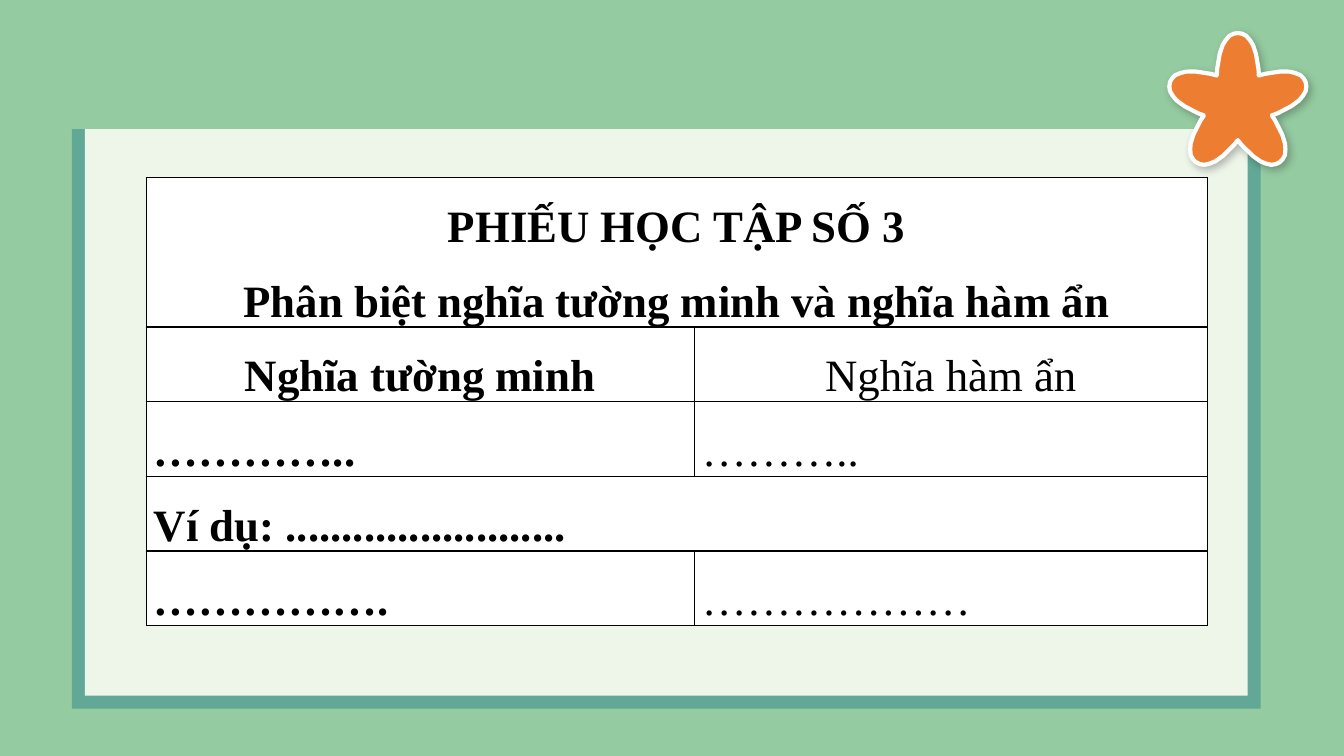
from dataclasses import dataclass
from math import cos, radians, sin

from lxml import etree
from pptx import Presentation
from pptx.dml.color import RGBColor
from pptx.enum.shapes import MSO_SHAPE
from pptx.enum.text import PP_ALIGN
from pptx.oxml.ns import qn
from pptx.util import Pt

RECTANGLE = MSO_SHAPE.RECTANGLE
CENTER = PP_ALIGN.CENTER
JUSTIFY = PP_ALIGN.JUSTIFY


@dataclass(frozen=True)
class Theme:
    backdrop: str = "95CBA1"
    frame: str = "62A896"
    paper: str = "EEF5E9"
    cell: str = "FFFFFF"
    ink: str = "000000"
    star: str = "ED7D31"
    star_edge: str = "FFFFFF"
    font: str = "Times New Roman"
    text_size: int = 32


THEME = Theme()
SLIDE_WIDTH, SLIDE_HEIGHT = 960, 540
BLANK_LAYOUT = 6

WORKSHEET_ROWS = [
    (105, CENTER, [["PHIẾU HỌC TẬP SỐ 3", "Phân biệt nghĩa tường minh và nghĩa hàm ẩn"]]),
    (53, CENTER, [["Nghĩa tường minh"], ["Nghĩa hàm ẩn"]]),
    (53, JUSTIFY, [["………….."], ["……….."]]),
    (53, JUSTIFY, [["Ví dụ: ........................."]]),
    (53, JUSTIFY, [["……………."], ["………………"]]),
]

HALF_PETAL = [
    (15, 20.6), (14.8, 25), (14, 30), (13, 36), (12, 39),
    (10.8, 42.5), (8.6, 46), (6, 49), (3, 50.5), (0, 51),
]


def color(code):
    return RGBColor.from_string(code)


def add_panel(slide, left, top, width, height, fill):
    panel = slide.shapes.add_shape(RECTANGLE, Pt(left), Pt(top), Pt(width), Pt(height))
    panel.shadow.inherit = False
    panel.fill.solid()
    panel.fill.fore_color.rgb = color(fill)
    panel.line.fill.background()


def add_board(slide, left, top, width, height):
    rim = 9.2
    add_panel(slide, left, top, width, height, THEME.frame)
    add_panel(slide, left + rim, top, width - 2 * rim, height - rim, THEME.paper)


def style_cell(cell):
    properties = cell._tc.get_or_add_tcPr()
    for side in ("a:lnL", "a:lnR", "a:lnT", "a:lnB"):
        border = etree.SubElement(properties, qn(side), w=str(Pt(1)))
        border_fill = etree.SubElement(border, qn("a:solidFill"))
        etree.SubElement(border_fill, qn("a:srgbClr"), val=THEME.ink)
    cell.fill.solid()
    cell.fill.fore_color.rgb = color(THEME.cell)
    cell.margin_left = cell.margin_right = Pt(5.4)
    cell.margin_top = cell.margin_bottom = 0


def write_cell(cell, lines, alignment, bold):
    frame = cell.text_frame
    for index, line in enumerate(lines):
        paragraph = frame.add_paragraph() if index else frame.paragraphs[0]
        paragraph.alignment = alignment
        paragraph.line_spacing = 1.5
        run = paragraph.add_run()
        run.text = line
        run.font.name = THEME.font
        run.font.size = Pt(THEME.text_size)
        run.font.bold = bold
        run.font.color.rgb = color(THEME.ink)


def add_worksheet(slide, left, top, width, height):
    worksheet = slide.shapes.add_table(
        len(WORKSHEET_ROWS), 2, Pt(left), Pt(top), Pt(width), Pt(height)
    ).table
    worksheet.first_row = worksheet.horz_banding = False
    explicit_width = 391.6
    worksheet.columns[0].width = Pt(explicit_width)
    worksheet.columns[1].width = Pt(width - explicit_width)
    for row, (row_height, alignment, entries) in enumerate(WORKSHEET_ROWS):
        worksheet.rows[row].height = Pt(row_height)
        for column in range(2):
            style_cell(worksheet.cell(row, column))
        if len(entries) == 1:
            worksheet.cell(row, 0).merge(worksheet.cell(row, 1))
        for column, lines in enumerate(entries):
            write_cell(worksheet.cell(row, column), lines, alignment, column == 0)


def add_star(slide, center_x, center_y):
    petal = [(-x, y) for x, y in HALF_PETAL] + HALF_PETAL[-2::-1]
    outline = []
    for turn in range(5):
        angle = radians(72 * turn)
        for x, y in petal:
            across = center_x + x * cos(angle) + y * sin(angle)
            down = center_y + x * sin(angle) - y * cos(angle)
            outline.append((Pt(across), Pt(down)))
    builder = slide.shapes.build_freeform(*outline[0])
    builder.add_line_segments(outline[1:], close=True)
    star = builder.convert_to_shape()
    star.fill.solid()
    star.fill.fore_color.rgb = color(THEME.star)
    star.line.color.rgb = color(THEME.star_edge)
    star.line.width = Pt(3)
    star.shadow.inherit = False
    effects = star._element.spPr.find(qn("a:effectLst"))
    shadow = etree.SubElement(
        effects, qn("a:outerShdw"), blurRad=str(Pt(6)), dist=str(Pt(3)),
        dir=str(45 * 60000), algn="ctr", rotWithShape="0",
    )
    tint = etree.SubElement(shadow, qn("a:srgbClr"), val=THEME.ink)
    etree.SubElement(tint, qn("a:alpha"), val="25000")


def build_worksheet_slide(presentation):
    slide = presentation.slides.add_slide(presentation.slide_layouts[BLANK_LAYOUT])
    slide.background.fill.solid()
    slide.background.fill.fore_color.rgb = color(THEME.backdrop)
    add_board(slide, 51.4, 92.2, 849, 414)
    add_worksheet(slide, 104.4, 126.9, 758.1, sum(row[0] for row in WORKSHEET_ROWS))
    add_star(slide, 884.2, 74.6)


def main():
    presentation = Presentation()
    presentation.slide_width = Pt(SLIDE_WIDTH)
    presentation.slide_height = Pt(SLIDE_HEIGHT)
    build_worksheet_slide(presentation)
    presentation.save("out.pptx")


if __name__ == "__main__":
    main()
